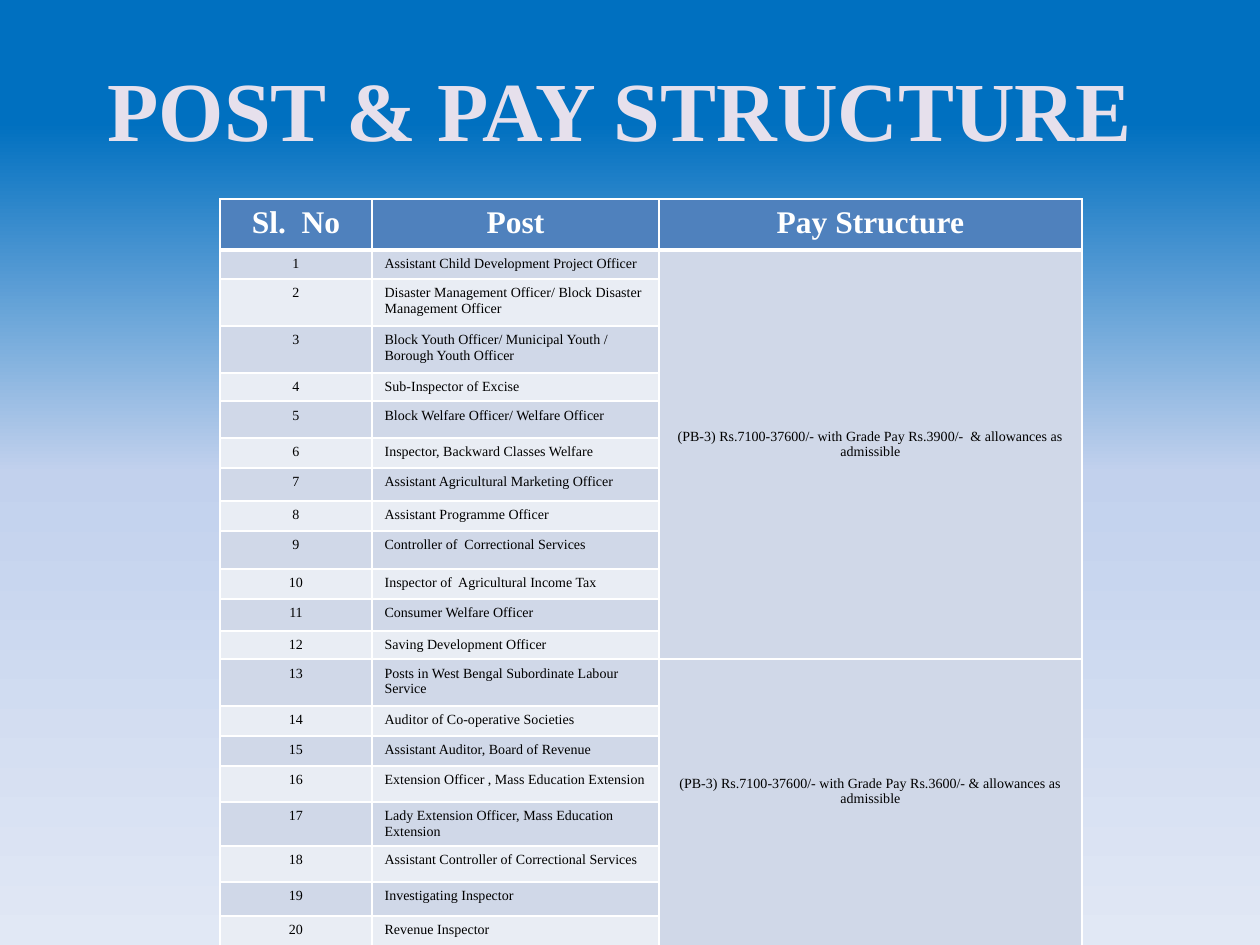
import copy
from dataclasses import dataclass

import pptx
import pptx.dml.color
import pptx.enum.text
import pptx.oxml
import pptx.oxml.ns
import pptx.util

FONT = "Times New Roman"
HEADER_FILL, ODD_FILL, EVEN_FILL = "4F81BD", "D0D8E8", "E9EDF4"
WHITE, BLACK = "FFFFFF", "000000"
CENTER, LEFT = pptx.enum.text.PP_ALIGN.CENTER, pptx.enum.text.PP_ALIGN.LEFT
MIDDLE = pptx.enum.text.MSO_ANCHOR.MIDDLE
COLUMN_WIDTHS = (152, 287, 423)
HEADER_HEIGHT = 51


@dataclass
class Post:
    title: str
    height: int


@dataclass
class PayBand:
    text: str
    first: int
    last: int
    bottom_margin: int


POSTS = [
    Post("Assistant Child Development Project Officer", 29),
    Post("Disaster Management Officer/ Block Disaster Management Officer", 47),
    Post("Block Youth Officer/ Municipal Youth / Borough Youth Officer", 47),
    Post("Sub-Inspector of Excise", 28),
    Post("Block Welfare Officer/ Welfare Officer", 37),
    Post("Inspector, Backward Classes Welfare", 30),
    Post("Assistant Agricultural Marketing Officer", 33),
    Post("Assistant Programme Officer", 30),
    Post("Controller of  Correctional Services", 38),
    Post("Inspector of  Agricultural Income Tax", 30),
    Post("Consumer Welfare Officer", 32),
    Post("Saving Development Officer", 28),
    Post("Posts in West Bengal Subordinate Labour Service", 47),
    Post("Auditor of Co-operative Societies", 30),
    Post("Assistant Auditor, Board of Revenue", 30),
    Post("Extension Officer , Mass Education Extension", 36),
    Post("Lady Extension Officer, Mass Education Extension", 44),
    Post("Assistant Controller of Correctional Services", 36),
    Post("Investigating Inspector", 34),
    Post("Revenue Inspector", 47),
]
PAY_BANDS = [
    PayBand("(PB-3) Rs.7100-37600/- with Grade Pay Rs.3900/-  & allowances as admissible", 1, 12, 27),
    PayBand("(PB-3) Rs.7100-37600/- with Grade Pay Rs.3600/- & allowances as admissible", 13, 20, 46),
]


def px(length: int) -> int:
    return round(length * 914400 / 126)


def rgb(color: str) -> pptx.dml.color.RGBColor:
    return pptx.dml.color.RGBColor.from_string(color)


def write(frame, text: str, size: int, color: str, bold: bool, align) -> None:
    frame.text = text
    paragraph = frame.paragraphs[0]
    paragraph.alignment = align
    font = paragraph.runs[0].font
    font.name, font.size, font.bold = FONT, pptx.util.Pt(size), bold
    font.color.rgb = rgb(color)


def style_cell(cell, fill: str, bottom_width: int = 1) -> None:
    """White borders come before the fill in the cell properties."""
    properties = cell._tc.get_or_add_tcPr()
    for side, width in (("L", 1), ("R", 1), ("T", 1), ("B", bottom_width)):
        properties.append(pptx.oxml.parse_xml(
            f'<a:ln{side} {pptx.oxml.ns.nsdecls("a")} w="{pptx.util.Pt(width)}">'
            f'<a:solidFill><a:srgbClr val="{WHITE}"/></a:solidFill></a:ln{side}>'))
    cell.fill.solid()
    cell.fill.fore_color.rgb = rgb(fill)


def paint_background(slide) -> None:
    fill = slide.background.fill
    fill.gradient()
    fill.gradient_angle = 270
    stop_list = slide.element.find(".//" + pptx.oxml.ns.qn("a:gsLst"))
    stop_list.append(copy.deepcopy(stop_list[-1]))
    colors = ((0.13, "0070C0"), (0.5, "C2D1ED"), (1, "E1E8F5"))
    for stop, (position, color) in zip(fill.gradient_stops, colors):
        stop.position = position
        stop.color.rgb = rgb(color)


def add_pay_table(slide) -> None:
    heights = [HEADER_HEIGHT] + [post.height for post in POSTS]
    table = slide.shapes.add_table(
        len(heights), len(COLUMN_WIDTHS), px(220), px(199),
        px(sum(COLUMN_WIDTHS)), px(sum(heights))).table
    for column, width in zip(table.columns, COLUMN_WIDTHS):
        column.width = px(width)
    for row, height in zip(table.rows, heights):
        row.height = px(height)

    # Header
    for cell, heading in zip(table.rows[0].cells, ("Sl.  No", "Post", "Pay Structure")):
        style_cell(cell, HEADER_FILL, bottom_width=3)
        write(cell.text_frame, heading, 18, WHITE, True, CENTER)

    # Numbered posts
    for number, post in enumerate(POSTS, start=1):
        serial, title, pay = table.rows[number].cells
        band_fill = ODD_FILL if number % 2 else EVEN_FILL
        style_cell(serial, band_fill)
        style_cell(title, band_fill)
        style_cell(pay, ODD_FILL)
        write(serial.text_frame, str(number), 8, BLACK, False, CENTER)
        write(title.text_frame, post.title, 8, BLACK, False, LEFT)

    # Pay bands spanning their posts
    for band in PAY_BANDS:
        pay = table.cell(band.first, 2)
        pay.merge(table.cell(band.last, 2))
        write(pay.text_frame, band.text, 8, BLACK, False, CENTER)
        pay.vertical_anchor = MIDDLE
        pay.margin_bottom = px(band.bottom_margin)


def main() -> None:
    deck = pptx.Presentation()
    deck.slide_width, deck.slide_height = px(1260), px(945)
    slide = deck.slides.add_slide(deck.slide_layouts[5])
    paint_background(slide)

    # Title
    title = slide.shapes.title
    title.left, title.top, title.width, title.height = px(53), px(32), px(1134), px(151)
    title.text_frame.vertical_anchor = MIDDLE
    write(title.text_frame, "POST & PAY STRUCTURE", 48, "E6E0EC", True, CENTER)

    add_pay_table(slide)
    deck.save("out.pptx")


if __name__ == "__main__":
    main()
